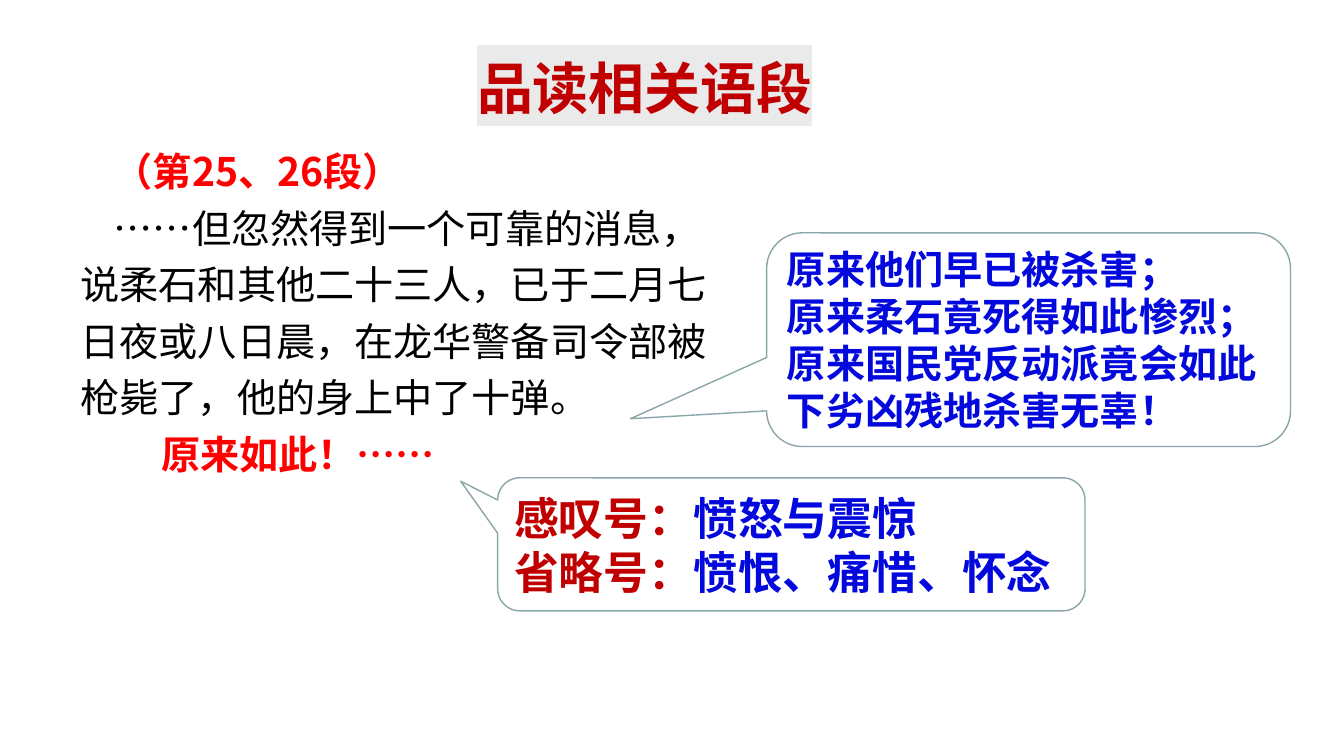
import pptx
import pptx.util
import pptx.dml.color
import pptx.enum.shapes
import pptx.enum.text
import pptx.oxml
import pptx.oxml.ns
from pptx.util import Inches

THEME = {
    "font": "Noto Sans CJK SC",
    "title": 40, "body": 28, "large": 32,
    "crimson": "C00000", "red": "FF0000", "black": "000000", "blue": "0309DC",
    "outline": "8AA6A8", "highlight": "EAEAEA",
}
NAMESPACE = pptx.oxml.ns.nsdecls("a")


def set_font(font, size, color, bold=True):
    font.size = pptx.util.Pt(THEME[size])
    font.bold = bold
    font.color.rgb = pptx.dml.color.RGBColor.from_string(THEME[color])
    font.name = THEME["font"]
    font._element.find(pptx.oxml.ns.qn("a:latin")).addnext(
        pptx.oxml.parse_xml(f'<a:ea {NAMESPACE} typeface="{THEME["font"]}"/>'))


def place(box, left, top, width, height):
    box.left, box.top = Inches(left), Inches(top)
    box.width, box.height = Inches(width), Inches(height)
    box.text_frame.word_wrap = True
    box.text_frame.auto_size = pptx.enum.text.MSO_AUTO_SIZE.NONE


deck = pptx.Presentation()
deck.slide_width, deck.slide_height = Inches(13.34), Inches(7.5)
page = deck.slides.add_slide(deck.slide_layouts[1])

# Title on a grey highlight
title = page.shapes.title
place(title, 4.39, 0.48, 4.02, 0.77)
para = title.text_frame.paragraphs[0]
para.alignment = pptx.enum.text.PP_ALIGN.CENTER
span = para.add_run()
span.text = "品读相关语段"
set_font(span.font, "title", "crimson")
span.font._element.find(pptx.oxml.ns.qn("a:solidFill")).addnext(pptx.oxml.parse_xml(
    f'<a:highlight {NAMESPACE}><a:srgbClr val="{THEME["highlight"]}"/></a:highlight>'))

# Passage: text, first-line indent, colour, bold
passage = page.placeholders[1]
place(passage, 0.7, 1.32, 6.68, 3.42)
passage_lines = [
    ("（第25、26段）", 0.33, "red", True),
    ("……但忽然得到一个可靠的消息，说柔石和其他二十三人，已于二月七日夜或八日晨，"
     "在龙华警备司令部被枪毙了，他的身上中了十弹。", 0.33, "black", False),
    ("原来如此！……", 0.8, "red", True),
]
for index, (text, indent, color, bold) in enumerate(passage_lines):
    frame = passage.text_frame
    para = frame.add_paragraph() if index else frame.paragraphs[0]
    para.text = text
    properties = para._p.get_or_add_pPr()
    properties.set("marL", "0")
    properties.set("indent", str(Inches(indent)))
    properties.append(pptx.oxml.parse_xml(f"<a:buNone {NAMESPACE}/>"))
    para.line_spacing = 1.2
    para.space_before = pptx.util.Pt(0)
    set_font(para.font, "body", color, bold)

# Callouts: position, pointer, text size, lines of coloured spans
callouts = [
    ((7.61, 2.31, 5.2, 2.12), (-0.76, 0.37), "body", [
        [("原来他们早已被杀害；", "blue")],
        [("原来柔石竟死得如此惨烈；", "blue")],
        [("原来国民党反动派竟会如此下劣凶残地杀害无辜！", "blue")],
    ]),
    ((4.94, 4.74, 5.83, 1.32), (-0.563, -0.474), "large", [
        [("感叹号：", "crimson"), ("愤怒与震惊", "blue")],
        [("省略号：", "crimson"), ("愤恨、痛惜、怀念", "blue")],
    ]),
]
for position, pointer, size, lines in callouts:
    callout = page.shapes.add_shape(
        pptx.enum.shapes.MSO_SHAPE.ROUNDED_RECTANGULAR_CALLOUT, 0, 0, 0, 0)
    place(callout, *position)
    callout.adjustments[0], callout.adjustments[1] = pointer
    callout.shadow.inherit = False
    callout.fill.background()
    callout.line.color.rgb = pptx.dml.color.RGBColor.from_string(THEME["outline"])
    callout.line.width = pptx.util.Pt(1)
    frame = callout.text_frame
    frame.vertical_anchor = pptx.enum.text.MSO_ANCHOR.MIDDLE
    for index, spans in enumerate(lines):
        para = frame.add_paragraph() if index else frame.paragraphs[0]
        para.alignment = pptx.enum.text.PP_ALIGN.LEFT
        set_font(para.font, size, spans[0][1])
        for text, color in spans:
            span = para.add_run()
            span.text = text
            if color != spans[0][1]:
                span.font.color.rgb = pptx.dml.color.RGBColor.from_string(THEME[color])

deck.save("out.pptx")
